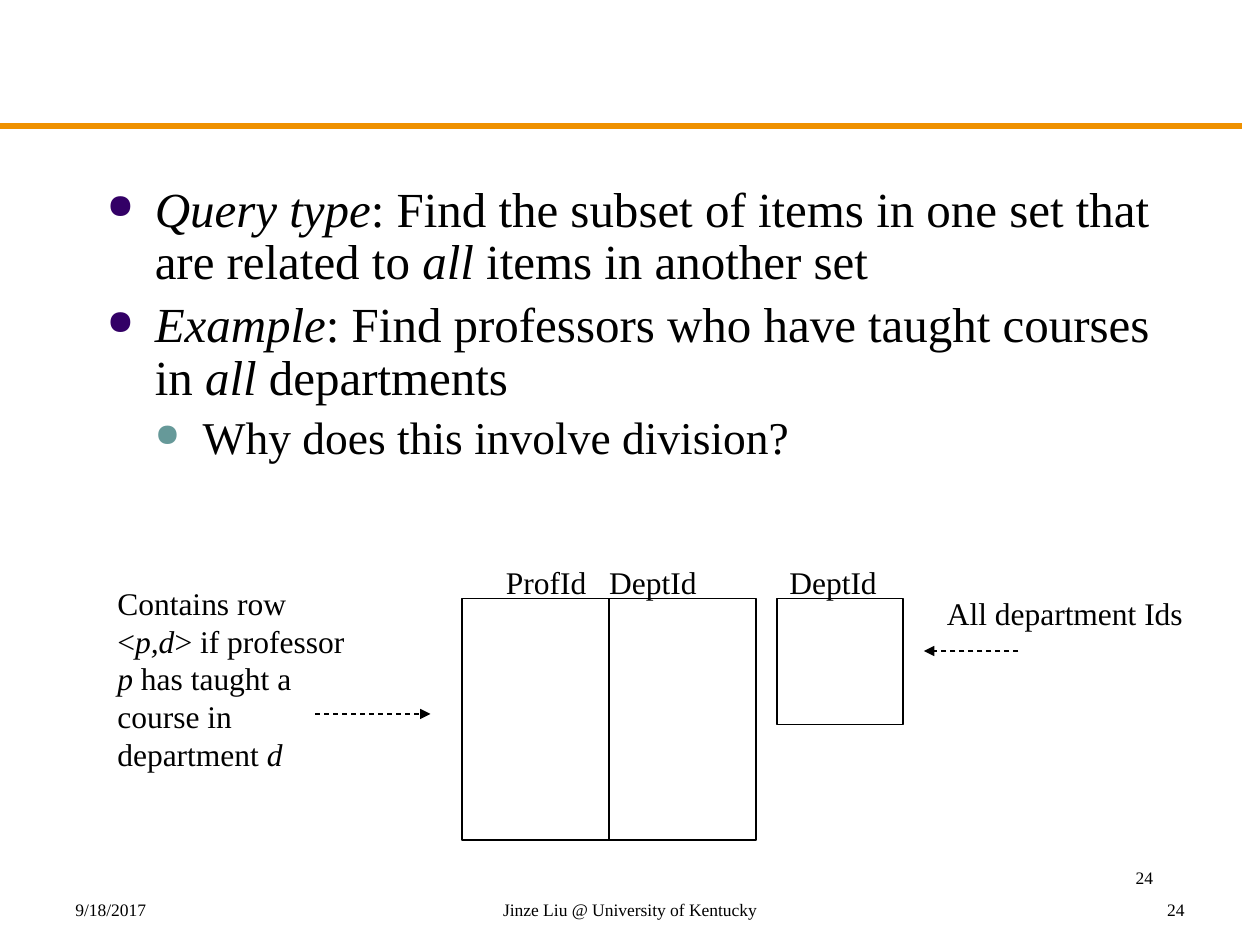
from dataclasses import dataclass

from lxml import etree
from pptx import Presentation
from pptx.dml.color import RGBColor
from pptx.enum.dml import MSO_LINE
from pptx.enum.shapes import MSO_CONNECTOR, MSO_SHAPE
from pptx.enum.text import MSO_AUTO_SIZE, PP_ALIGN
from pptx.oxml.ns import qn
from pptx.util import Inches, Pt

LEFT, CENTER, RIGHT = PP_ALIGN.LEFT, PP_ALIGN.CENTER, PP_ALIGN.RIGHT
RECT, STRAIGHT, DASH = MSO_SHAPE.RECTANGLE, MSO_CONNECTOR.STRAIGHT, MSO_LINE.DASH
FIT = MSO_AUTO_SIZE.SHAPE_TO_FIT_TEXT


@dataclass(frozen=True)
class Theme:
    font: str = "Times New Roman"
    ink: str = "000000"
    paper: str = "FFFFFF"
    rule: str = "EF9100"
    bullets: tuple = ("330066", "669999")
    body: tuple = (28, 26)
    label: int = 18
    footer: int = 10
    thin: float = 0.75
    thick: float = 3


T = Theme()
COLS, ROWS = 120, 90
INDENT = 0.38
TAB = 0.82

# A paragraph is a list of runs; every second run is italic.
BODY = [
    (0, ["", "Query type", ": Find the subset of items in one set that are related to ",
         "all", " items in another set"]),
    (0, ["", "Example", ": Find professors who have taught courses in ", "all", " departments"]),
    (1, ["Why does this involve division?"]),
]
BODY_BOX = (9, 17, 104, 34)
FOOTERS = [
    ("9/18/2017", (6, 85, 28, 3), LEFT),
    ("Jinze Liu @ University of Kentucky", (41, 85, 38, 3), CENTER),
    ("24", (86, 85, 28, 3), RIGHT),
    ("24", (86, 82, 25, 6), RIGHT),
]
TABLES = [(44, 57, 28, 23), (74, 57, 12, 12)]
LABELS = [
    ([["ProfId\tDeptId"]], (47, 53, 22.7, 5.2)),
    ([["DeptId"]], (74, 53, 11.6, 5.2)),
    ([["All department Ids"]], (89, 56, 27.4, 5.2)),
    ([["Contains row"], ["<", "p,d", "> if professor"], ["", "p", " has taught a"],
      ["course in"], ["department ", "d"]], (10, 55, 26.4, 21.2)),
]
ARROWS = [(30, 68, 41, 68), (97, 62, 88, 62)]


def grid(*cells):
    """Convert grid cells, twelve to the inch, to lengths."""
    return [Inches(c / 12) for c in cells]


def rgb(value):
    """Return a colour from its hex value."""
    return RGBColor.from_string(value)


def add_runs(p, runs, size, align=LEFT):
    """Fill a paragraph with alternating upright and italic runs."""
    p.alignment = align
    for i, text in enumerate(runs):
        if text:
            r = p.add_run()
            r.text = text
            r.font.name, r.font.size = T.font, Pt(size)
            r.font.italic = i % 2 == 1
            r.font.color.rgb = rgb(T.ink)


def add_text(s, paragraphs, box, size=T.label, align=LEFT, wrap=True):
    """Add a text box and return its paragraphs."""
    tf = s.shapes.add_textbox(*grid(*box)).text_frame
    tf.word_wrap = wrap
    if not wrap:
        tf.auto_size = FIT
    for i, runs in enumerate(paragraphs):
        p = tf.add_paragraph() if i else tf.paragraphs[0]
        add_runs(p, runs, size, align)
    return tf.paragraphs


def add_bullet(p, level):
    """Give a paragraph its level, spacing, hanging indent and bullet."""
    size = T.body[level]
    p.level, p.line_spacing, p.space_before = level, 0.9, Pt(size * 0.2)
    for r in p.runs:
        r.font.size = Pt(size)
    pPr = p._p.get_or_add_pPr()
    pPr.set("marL", str(Inches(INDENT * (level + 1))))
    pPr.set("indent", str(-Inches(INDENT)))
    color = etree.SubElement(pPr, qn("a:buClr"))
    etree.SubElement(color, qn("a:srgbClr"), val=T.bullets[level])
    etree.SubElement(pPr, qn("a:buSzPct"), val="70000")
    etree.SubElement(pPr, qn("a:buChar"), char="●")


def add_tab(p):
    """Set the tab stop that separates two column names."""
    tabs = etree.SubElement(p._p.get_or_add_pPr(), qn("a:tabLst"))
    etree.SubElement(tabs, qn("a:tab"), pos=str(Inches(TAB)), algn="l")


def add_line(s, ends, color=T.ink, width=T.thin, arrow=False):
    """Draw a straight line, or a dashed arrow."""
    line = s.shapes.add_connector(STRAIGHT, *grid(*ends))
    line.line.color.rgb, line.line.width = rgb(color), Pt(width)
    if arrow:
        line.line.dash_style = DASH
        etree.SubElement(line.line._get_or_add_ln(), qn("a:tailEnd"), type="triangle")
    etree.SubElement(line._element.spPr, qn("a:effectLst"))


def add_box(s, box):
    """Draw an outlined relation box."""
    sp = s.shapes.add_shape(RECT, *grid(*box))
    sp.shadow.inherit = False
    sp.fill.solid()
    sp.fill.fore_color.rgb = rgb(T.paper)
    sp.line.color.rgb, sp.line.width = rgb(T.ink), Pt(T.thin)


def main():
    """Build the division query slide."""
    prs = Presentation()
    prs.slide_width, prs.slide_height = grid(COLS, ROWS)
    s = prs.slides.add_slide(prs.slide_layouts[6])
    add_line(s, (0, 12, 118.3, 12), T.rule, T.thick)
    for text, box, align in FOOTERS:
        add_text(s, [[text]], box, T.footer, align)
    paragraphs = add_text(s, [runs for _, runs in BODY], BODY_BOX)
    for p, (level, _) in zip(paragraphs, BODY):
        add_bullet(p, level)
    for box in TABLES:
        add_box(s, box)
    for lines, box in LABELS:
        paragraphs = add_text(s, lines, box, wrap=False)
        if "\t" in lines[0][0]:
            add_tab(paragraphs[0])
    left, top, width, height = TABLES[0]
    middle = left + width / 2
    add_line(s, (middle, top, middle, top + height))
    for ends in ARROWS:
        add_line(s, ends, arrow=True)
    prs.save("out.pptx")


if __name__ == "__main__":
    main()
